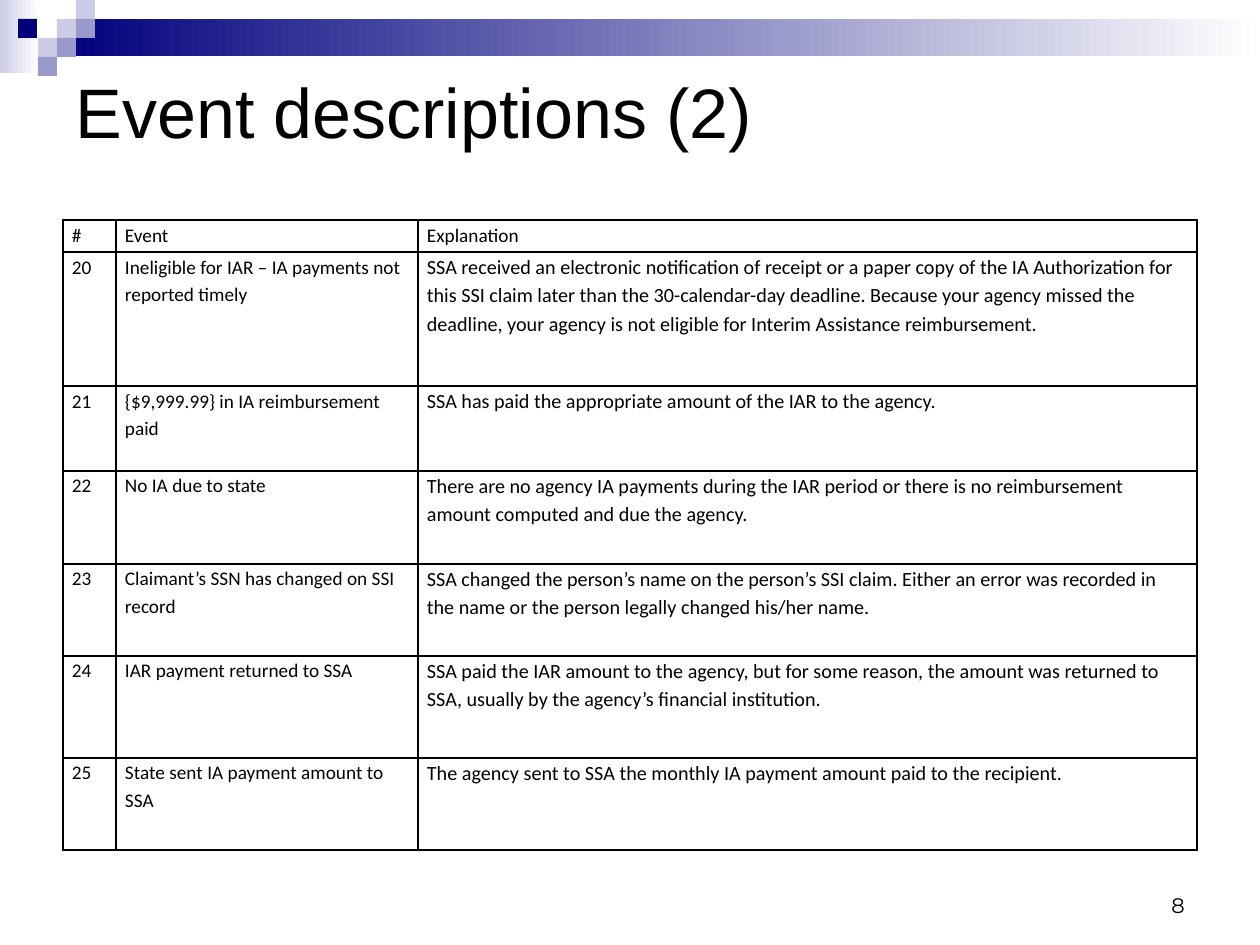
from lxml import etree
from pptx import Presentation
from pptx.dml.color import RGBColor
from pptx.enum import shapes, text
from pptx.oxml.ns import qn
from pptx.util import Emu, Pt

SCALE = 914400 / 126
COLORS = {
    "navy": "00007D",
    "lilac": "9999CC",
    "pale": "CCCCE6",
    "white": "FFFFFF",
    "black": "000000",
}
COL_WIDTHS = [53, 302, 779]
ROW_HEIGHTS = [32, 134, 85, 93, 92, 102, 92]
EVENTS = [
    ("#", "Event", "Explanation"),
    ("20", "Ineligible for IAR – IA payments not reported timely",
     "SSA received an electronic notification of receipt or a paper copy of the "
     "IA Authorization for this SSI claim later than the 30-calendar-day deadline. "
     "Because your agency missed the deadline, your agency is not eligible for "
     "Interim Assistance reimbursement."),
    ("21", "{$9,999.99} in IA reimbursement paid",
     "SSA has paid the appropriate amount of the IAR to the agency."),
    ("22", "No IA due to state",
     "There are no agency IA payments during the IAR period or there is no "
     "reimbursement amount computed and due the agency."),
    ("23", "Claimant’s SSN has changed on SSI record",
     "SSA changed the person’s name on the person’s SSI claim. Either an error "
     "was recorded in the name or the person legally changed his/her name."),
    ("24", "IAR payment returned to SSA",
     "SSA paid the IAR amount to the agency, but for some reason, the amount was "
     "returned to SSA, usually by the agency’s financial institution."),
    ("25", "State sent IA payment amount to SSA",
     "The agency sent to SSA the monthly IA payment amount paid to the recipient."),
]
SQUARES = [
    (57, 19, "pale"),
    (76, 0, "pale"),
    (76, 19, "lilac"),
    (38, 38, "pale"),
    (18, 19, "navy"),
    (57, 38, "lilac"),
    (38, 57, "lilac"),
]


def px(n):
    return Emu(round(n * SCALE))


def rgb(name):
    return RGBColor.from_string(COLORS[name])


def place(sp, x, y, w, h):
    sp.left, sp.top, sp.width, sp.height = px(x), px(y), px(w), px(h)


def format_text(tf, font, size):
    for p in tf.paragraphs:
        for r in p.runs:
            r.font.name = font
            r.font.size = Pt(size)
            r.font.color.rgb = rgb("black")


def add_rect(s, x, y, w, h, color, fade=False):
    sp = s.shapes.add_shape(shapes.MSO_SHAPE.RECTANGLE, px(x), px(y), px(w), px(h))
    sp.shadow.inherit = False
    sp.line.fill.background()
    if fade:
        sp.fill.gradient()
        sp.fill.gradient_angle = 0
        for stop, name in zip(sp.fill.gradient_stops, (color, "white")):
            stop.color.rgb = rgb(name)
    else:
        sp.fill.solid()
        sp.fill.fore_color.rgb = rgb(color)


def add_banner(s):
    add_rect(s, 0, 0, 39, 73, "pale", fade=True)
    add_rect(s, 57, 19, 1203, 37, "navy", fade=True)
    for x, y, color in SQUARES:
        add_rect(s, x, y, 19, 19, color)


def set_title(s, words):
    sp = s.shapes.title
    place(sp, 63, 63, 1134, 95)
    tf = sp.text_frame
    tf.text = words
    tf.vertical_anchor = text.MSO_ANCHOR.MIDDLE
    tf.paragraphs[0].alignment = text.PP_ALIGN.LEFT
    format_text(tf, "Arial", 40)


def add_page_number(s, number):
    tf = s.shapes.add_textbox(px(903), px(861), px(294), px(63)).text_frame
    tf.word_wrap = True
    tf.text = number
    tf.vertical_anchor = text.MSO_ANCHOR.BOTTOM
    tf.paragraphs[0].alignment = text.PP_ALIGN.RIGHT
    format_text(tf, "Montserrat", 12)


def set_borders(cell):
    tc_pr = cell._tc.get_or_add_tcPr()
    for i, side in enumerate(("a:lnL", "a:lnR", "a:lnT", "a:lnB")):
        ln = etree.Element(qn(side), w=str(Pt(1)))
        fill = etree.SubElement(ln, qn("a:solidFill"))
        etree.SubElement(fill, qn("a:srgbClr"), val=COLORS["black"])
        tc_pr.insert(i, ln)


def fill_cell(cell, words, size):
    cell.margin_left = cell.margin_right = px(9)
    cell.margin_top = cell.margin_bottom = 0
    cell.fill.background()
    set_borders(cell)
    tf = cell.text_frame
    tf.text = words
    tf.paragraphs[0].line_spacing = 1.15
    format_text(tf, "Calibri", size)


def add_event_table(s):
    frame = s.shapes.add_table(len(EVENTS), len(COL_WIDTHS), px(63), px(220),
                               px(sum(COL_WIDTHS)), px(sum(ROW_HEIGHTS)))
    table = frame.table
    table.first_row = table.horz_banding = False
    for col, width in zip(table.columns, COL_WIDTHS):
        col.width = px(width)
    for row, height in zip(table.rows, ROW_HEIGHTS):
        row.height = px(height)
    for i, event in enumerate(EVENTS):
        for j, words in enumerate(event):
            fill_cell(table.cell(i, j), words, 11.5 if i and j == 2 else 11)


def main():
    prs = Presentation()
    prs.slide_width, prs.slide_height = px(1260), px(945)
    s = prs.slides.add_slide(prs.slide_layouts[5])
    add_banner(s)
    add_page_number(s, "8")
    set_title(s, "Event descriptions (2)")
    add_event_table(s)
    prs.save("out.pptx")


if __name__ == "__main__":
    main()
